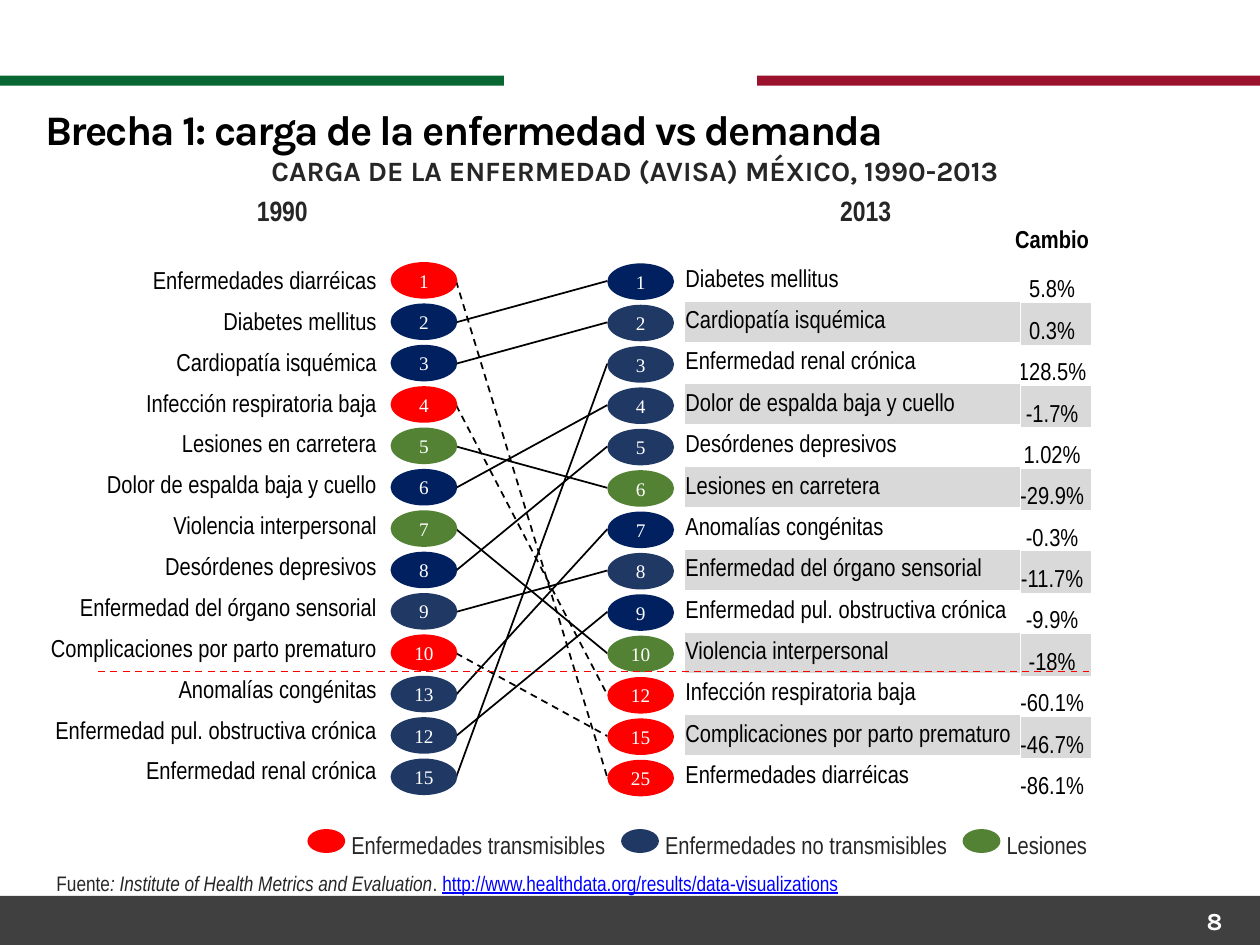
from lxml.etree import SubElement
from pptx import Presentation
from pptx.dml.color import RGBColor
from pptx.enum.dml import MSO_LINE
from pptx.enum.shapes import MSO_CONNECTOR, MSO_SHAPE
from pptx.enum.text import MSO_ANCHOR, PP_ALIGN
from pptx.oxml.ns import qn
from pptx.util import Inches, Pt

COLORS = {
    "black": "000000", "white": "FFFFFF", "text": "262626", "band": "D9D9D9",
    "footer": "404040", "green": "076632", "crimson": "9B122D", "link": "0000FF",
    "red": "FF0000", "navy": "002060", "blue": "203864", "olive": "548235",
}
NARROW, KARLA, TIMES = "Arial Narrow", "Karla", "Times New Roman"
LEFT, CENTER, RIGHT = PP_ALIGN.LEFT, PP_ALIGN.CENTER, PP_ALIGN.RIGHT

# (rank, disease, oval colour)
RANKING_1990 = [
    (1, "Enfermedades diarréicas", "red"),
    (2, "Diabetes mellitus", "navy"),
    (3, "Cardiopatía isquémica", "navy"),
    (4, "Infección respiratoria baja", "red"),
    (5, "Lesiones en carretera", "olive"),
    (6, "Dolor de espalda baja y cuello", "navy"),
    (7, "Violencia interpersonal", "olive"),
    (8, "Desórdenes depresivos", "navy"),
    (9, "Enfermedad del órgano sensorial", "blue"),
    (10, "Complicaciones por parto prematuro", "red"),
    (13, "Anomalías congénitas", "blue"),
    (12, "Enfermedad pul. obstructiva crónica", "blue"),
    (15, "Enfermedad renal crónica", "blue"),
]
# (rank, disease, oval colour, change)
RANKING_2013 = [
    (1, "Diabetes mellitus", "navy", "5.8%"),
    (2, "Cardiopatía isquémica", "blue", "0.3%"),
    (3, "Enfermedad renal crónica", "blue", "128.5%"),
    (4, "Dolor de espalda baja y cuello", "blue", "-1.7%"),
    (5, "Desórdenes depresivos", "blue", "1.02%"),
    (6, "Lesiones en carretera", "olive", "-29.9%"),
    (7, "Anomalías congénitas", "navy", "-0.3%"),
    (8, "Enfermedad del órgano sensorial", "blue", "-11.7%"),
    (9, "Enfermedad pul. obstructiva crónica", "navy", "-9.9%"),
    (10, "Violencia interpersonal", "olive", "-18%"),
    (12, "Infección respiratoria baja", "red", "-60.1%"),
    (15, "Complicaciones por parto prematuro", "red", "-46.7%"),
    (25, "Enfermedades diarréicas", "red", "-86.1%"),
]
OVAL_PITCH = 3.94 / 12
OVAL_W, OVAL_H = 0.53, 0.29


def rgb(name):
    return RGBColor.from_string(COLORS[name])


def write(paragraph, text, size=14, font=NARROW, color="black", bold=False,
          italic=False, underline=False, spacing=None, align=None):
    """Append a formatted run; spacing is in points."""
    if align is not None:
        paragraph.alignment = align
    run = paragraph.add_run()
    run.text = text
    run.font.size, run.font.name = Pt(size), font
    run.font.bold, run.font.italic, run.font.underline = bold, italic, underline
    run.font.color.rgb = rgb(color)
    if spacing is not None:
        run.font._element.set("spc", str(int(spacing * 100)))


def set_borders(cell, color):
    """Outline a cell at 1 pt, or clear its outline when color is None."""
    properties = cell._tc.get_or_add_tcPr()
    for index, side in enumerate(("lnL", "lnR", "lnT", "lnB")):
        line = properties.makeelement(qn(f"a:{side}"), {"w": str(Pt(1))})
        properties.insert(index, line)
        if color is None:
            SubElement(line, qn("a:noFill"))
        else:
            fill = SubElement(line, qn("a:solidFill"))
            SubElement(fill, qn("a:srgbClr"), val=COLORS[color])


class SlideBuilder:
    def __init__(self, slide):
        self.shapes = slide.shapes

    def shape(self, kind, left, top, width, height, fill):
        shape = self.shapes.add_shape(
            kind, Inches(left), Inches(top), Inches(width), Inches(height))
        shape.shadow.inherit = False
        shape.fill.solid()
        shape.fill.fore_color.rgb = rgb(fill)
        shape.line.fill.background()
        return shape

    def rank_oval(self, left, top, rank, fill):
        oval = self.shape(MSO_SHAPE.OVAL, left, top, OVAL_W, OVAL_H, fill)
        frame = oval.text_frame
        frame.margin_left = frame.margin_right = 0
        frame.margin_top = frame.margin_bottom = 0
        frame.vertical_anchor = MSO_ANCHOR.MIDDLE
        write(frame.paragraphs[0], str(rank), size=11, font=TIMES, color="white", align=CENTER)

    def text(self, left, top, width, height, *runs, **style):
        """Add a text box; each run is a (text, overrides) pair."""
        box = self.shapes.add_textbox(
            Inches(left), Inches(top), Inches(width), Inches(height))
        box.text_frame.word_wrap = True
        for content, overrides in runs:
            write(box.text_frame.paragraphs[0], content, **{**style, **overrides})

    def line(self, x1, y1, x2, y2, color="black", dashed=False):
        line = self.shapes.add_connector(
            MSO_CONNECTOR.STRAIGHT, Inches(x1), Inches(y1), Inches(x2), Inches(y2))
        line.line.color.rgb = rgb(color)
        line.line.width = Pt(1)
        if dashed:
            line.line.dash_style = MSO_LINE.DASH
        SubElement(line._element.spPr, qn("a:effectLst"))

    def column(self, left, top, width, height, rows, align, border=None, fills=(None, None),
               header=None):
        """Add a one-column table whose rows alternate between two fills."""
        entries = ([header] if header else []) + rows
        table = self.shapes.add_table(
            len(entries), 1, Inches(left), Inches(top), Inches(width), Inches(height)).table
        table.first_row = table.horz_banding = False
        for index, entry in enumerate(entries):
            table.rows[index].height = Inches(height / len(entries))
            is_header = bool(header) and index == 0
            cell = table.cell(index, 0)
            cell.margin_left = cell.margin_right = cell.margin_top = Inches(0.01)
            cell.margin_bottom = 0
            cell.vertical_anchor = (
                MSO_ANCHOR.BOTTOM if header and not is_header else MSO_ANCHOR.MIDDLE)
            fill = None if is_header else fills[(index - bool(header)) % 2]
            if fill:
                cell.fill.solid()
                cell.fill.fore_color.rgb = rgb(fill)
            else:
                cell.fill.background()
            set_borders(cell, border)
            write(cell.text_frame.paragraphs[0], entry, bold=is_header, align=align)


def main():
    deck = Presentation()
    deck.slide_width, deck.slide_height = Inches(10), Inches(7.5)
    page = SlideBuilder(deck.slides.add_slide(deck.slide_layouts[6]))

    for left, top, width, height, fill in [
            (0, 7.11, 10, 0.39, "footer"), (0, 0.6, 4, 0.08, "green"),
            (6.01, 0.6, 3.99, 0.08, "crimson")]:
        page.shape(MSO_SHAPE.RECTANGLE, left, top, width, height, fill)

    page.text(0.35, 6.86, 8.66, 0.3, ("Fuente", {}),
              (": Institute of Health Metrics and Evaluation", {"italic": True}), (". ", {}),
              ("http://www.healthdata.org/results/data-visualizations",
               {"color": "link", "underline": True}), size=12, color="text")
    for year, left in (("1990", 1.94), ("2013", 6.57)):
        page.text(left, 1.49, 0.8, 0.4, (year, {}), size=16, color="text", bold=True)

    page.column(8.04, 1.75, 0.62, 4.6, [row[3] for row in RANKING_2013], CENTER,
                fills=(None, "band"), header="Cambio")
    page.column(0.34, 2.08, 2.66, 4.22, [row[1] for row in RANKING_1990], RIGHT, border="white")
    page.column(5.43, 2.06, 2.67, 4.27, [row[1] for row in RANKING_2013], LEFT, border="white",
                fills=("white", "band"))

    place_2013 = {row[1]: place for place, row in enumerate(RANKING_2013)}
    for place, (_, disease, color) in enumerate(RANKING_1990):
        page.line(3.62, 2.23 + place * OVAL_PITCH,
                  4.82, 2.23 + place_2013[disease] * OVAL_PITCH, dashed=color == "red")
    for left, top, ranking in ((3.1, 2.08, RANKING_1990), (4.82, 2.09, RANKING_2013)):
        for place, (rank, _, color, *_) in enumerate(ranking):
            page.rank_oval(left, top + place * OVAL_PITCH, rank, color)
    page.line(0.78, 5.33, 8.64, 5.33, color="red", dashed=True)

    for left, width, color, label in [
            (2.44, 2.38, "red", "Enfermedades transmisibles"),
            (4.93, 2.58, "blue", "Enfermedades no transmisibles"),
            (7.64, 2.06, "olive", "Lesiones")]:
        page.shape(MSO_SHAPE.OVAL, left, 6.58, 0.3, 0.19, color)
        page.text(left + 0.25, 6.54, width, 0.34, (label, {}), color="text")

    page.text(0.26, 0.77, 9.46, 0.77, ("Brecha 1: carga de la enfermedad vs demanda", {}),
              size=24, font=KARLA, bold=True, spacing=-1)
    page.text(0.04, 1.17, 10, 0.37, ("CARGA DE LA ENFERMEDAD (AVISA) MÉXICO, 1990-2013", {}),
              size=16, font=KARLA, color="text", bold=True, align=CENTER)
    page.text(7.47, 7.14, 2.33, 0.36, ("8", {}), font=KARLA, color="white", bold=True, align=RIGHT)
    deck.save("out.pptx")


if __name__ == "__main__":
    main()
